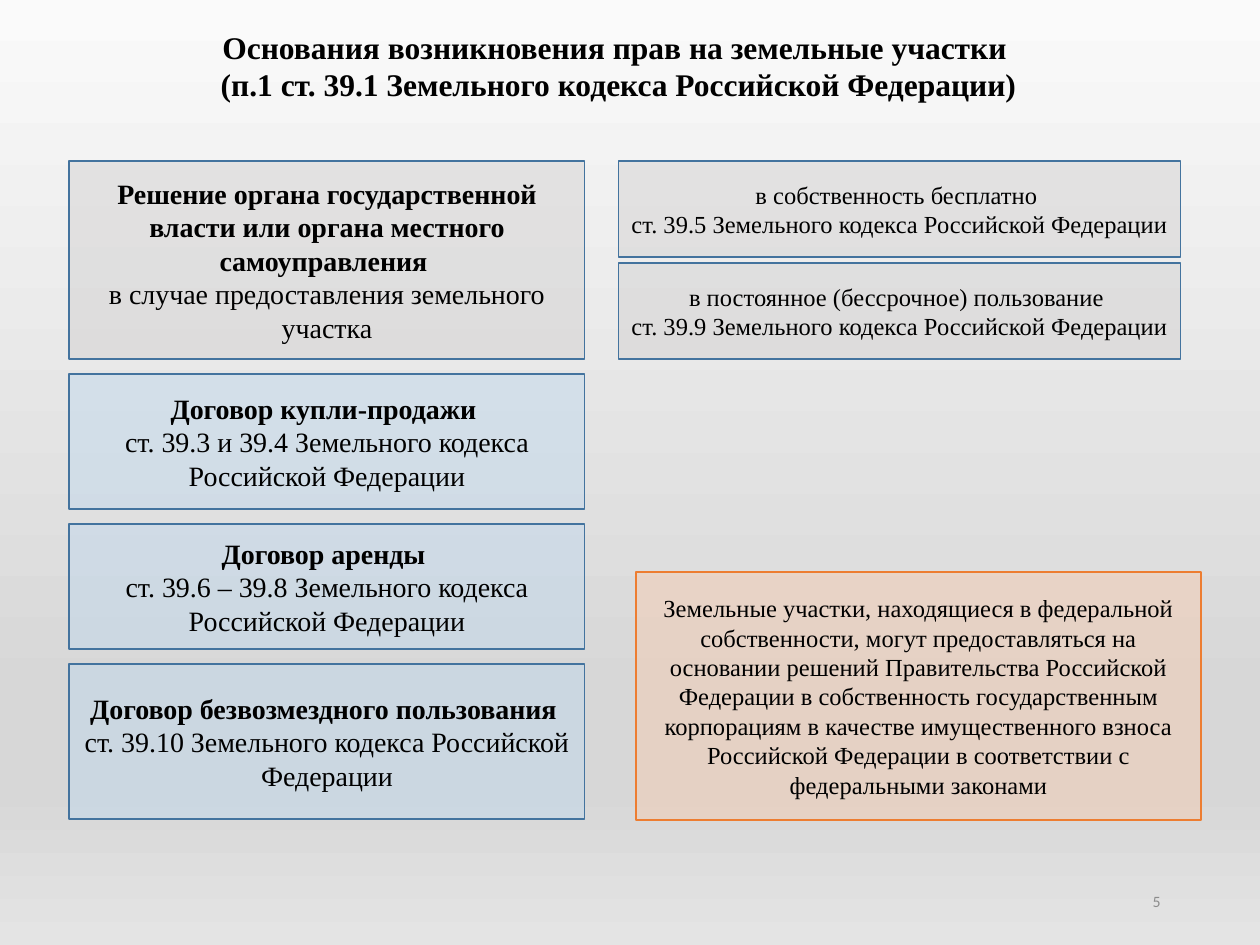
from copy import deepcopy
from dataclasses import dataclass

from lxml.etree import SubElement
from pptx import Presentation
from pptx.dml.color import RGBColor
from pptx.enum.shapes import MSO_SHAPE
from pptx.enum.text import MSO_ANCHOR, PP_ALIGN
from pptx.oxml.ns import qn
from pptx.util import Inches, Pt

COLS, ROWS = 1000, 750
CELL = Inches(10) // COLS


@dataclass(frozen=True)
class Theme:
    """Colours, fonts and type sizes of the slide."""
    serif: str = "Times New Roman"
    sans: str = "Calibri"
    ink: str = "000000"
    mute: str = "8C8C8C"
    grey: str = "D0CECE"
    blue: str = "BDD7EE"
    peach: str = "F8CBAD"
    edge: str = "43739E"
    warm: str = "ED7D31"
    alpha: int = 45
    title: int = 18
    large: int = 16
    body: int = 14
    small: int = 9
    stops: tuple = ((0, "FAFAFA", 11), (74, "D7D7D7", 100),
                    (83, "D7D7D7", 100), (100, "E4E4E4", 100))


THEME = Theme()


def place(*cells):
    """Turn grid columns and rows into lengths."""
    return [cell * CELL for cell in cells]


def fade(color, share):
    """Set the opacity of a colour element in percent."""
    SubElement(color, qn("a:alpha")).set("val", str(share * 1000))


def write(shape, lines, size=THEME.body, font=THEME.serif, color=THEME.ink,
          bold=0, align=PP_ALIGN.CENTER, anchor=MSO_ANCHOR.MIDDLE):
    """Fill a shape with paragraphs, the first few of them bold."""
    frame = shape.text_frame
    frame.word_wrap = True
    frame.vertical_anchor = anchor
    frame.text = "\n".join(lines)
    for rank, para in enumerate(frame.paragraphs):
        para.alignment = align
        face = para.runs[0].font
        face.name, face.size, face.bold = font, Pt(size), rank < bold
        face.color.rgb = RGBColor.from_string(color)


def label(slide, area, lines, **style):
    """Add a text box."""
    write(slide.shapes.add_textbox(*place(*area)), lines, **style)


def panel(slide, area, lines, fill, edge=THEME.edge, **style):
    """Add a translucent framed rectangle with text."""
    box = slide.shapes.add_shape(MSO_SHAPE.RECTANGLE, *place(*area))
    box.shadow.inherit = False
    box.fill.solid()
    box.fill.fore_color.rgb = RGBColor.from_string(fill)
    fade(box.element.spPr.find(f"{qn('a:solidFill')}/{qn('a:srgbClr')}"), THEME.alpha)
    box.line.color.rgb = RGBColor.from_string(edge)
    box.line.width = Pt(1)
    write(box, lines, **style)


def stack(slide, left, top, width, gap, items, **style):
    """Stack panels downwards with equal gaps."""
    for height, fill, lines in items:
        panel(slide, (left, top, width, height), lines, fill, **style)
        top += height + gap


def shade(slide):
    """Paint the background with a vertical gradient."""
    slide.background.fill.gradient()
    grad = slide.element.find(f".//{qn('a:gradFill')}")
    stops = grad.find(qn("a:gsLst"))
    model = deepcopy(stops[0])
    for node in list(stops) + list(model):
        node.getparent().remove(node)
    for spot, color, share in THEME.stops:
        stop = deepcopy(model)
        stop.set("pos", str(spot * 1000))
        tone = SubElement(stop, qn("a:srgbClr"))
        tone.set("val", color)
        if share < 100:
            fade(tone, share)
        stops.append(stop)
    grad.find(qn("a:lin")).set("ang", str(90 * 60000))


def main():
    """Build and save the slide."""
    deck = Presentation()
    deck.slide_width, deck.slide_height = place(COLS, ROWS)
    slide = deck.slides.add_slide(deck.slide_layouts[6])
    shade(slide)
    label(slide, (706, 695, 225, 40), ["5"], size=THEME.small, font=THEME.sans,
          color=THEME.mute, align=PP_ALIGN.RIGHT)
    label(slide, (45, 17, 892, 71),
          ["Основания возникновения прав на земельные участки ",
           "(п.1 ст. 39.1 Земельного кодекса Российской Федерации)"],
          size=THEME.title, bold=2, anchor=MSO_ANCHOR.TOP)
    stack(slide, 55, 128, 409, 12, [
        (157, THEME.grey,
         ["Решение органа государственной власти или органа местного самоуправления ",
          "в случае предоставления земельного участка"]),
        (107, THEME.blue,
         ["Договор купли-продажи ",
          "ст. 39.3 и 39.4 Земельного кодекса Российской Федерации"]),
        (99, THEME.blue,
         ["Договор аренды ",
          "ст. 39.6 – 39.8 Земельного кодекса Российской Федерации"]),
        (123, THEME.blue,
         ["Договор безвозмездного пользования ",
          "ст. 39.10 Земельного кодекса Российской Федерации"]),
    ], size=THEME.large, bold=1)
    stack(slide, 491, 128, 446, 5, [
        (76, THEME.grey,
         ["в собственность бесплатно ",
          "ст. 39.5 Земельного кодекса Российской Федерации"]),
        (76, THEME.grey,
         ["в постоянное (бессрочное) пользование ",
          "ст. 39.9 Земельного кодекса Российской Федерации"]),
    ])
    panel(slide, (505, 454, 448, 197),
          ["Земельные участки, находящиеся в федеральной собственности, могут "
           "предоставляться на основании решений Правительства Российской "
           "Федерации в собственность государственным корпорациям в качестве "
           "имущественного взноса Российской Федерации в соответствии с "
           "федеральными законами"], THEME.peach, edge=THEME.warm)
    deck.save("out.pptx")


if __name__ == "__main__":
    main()
